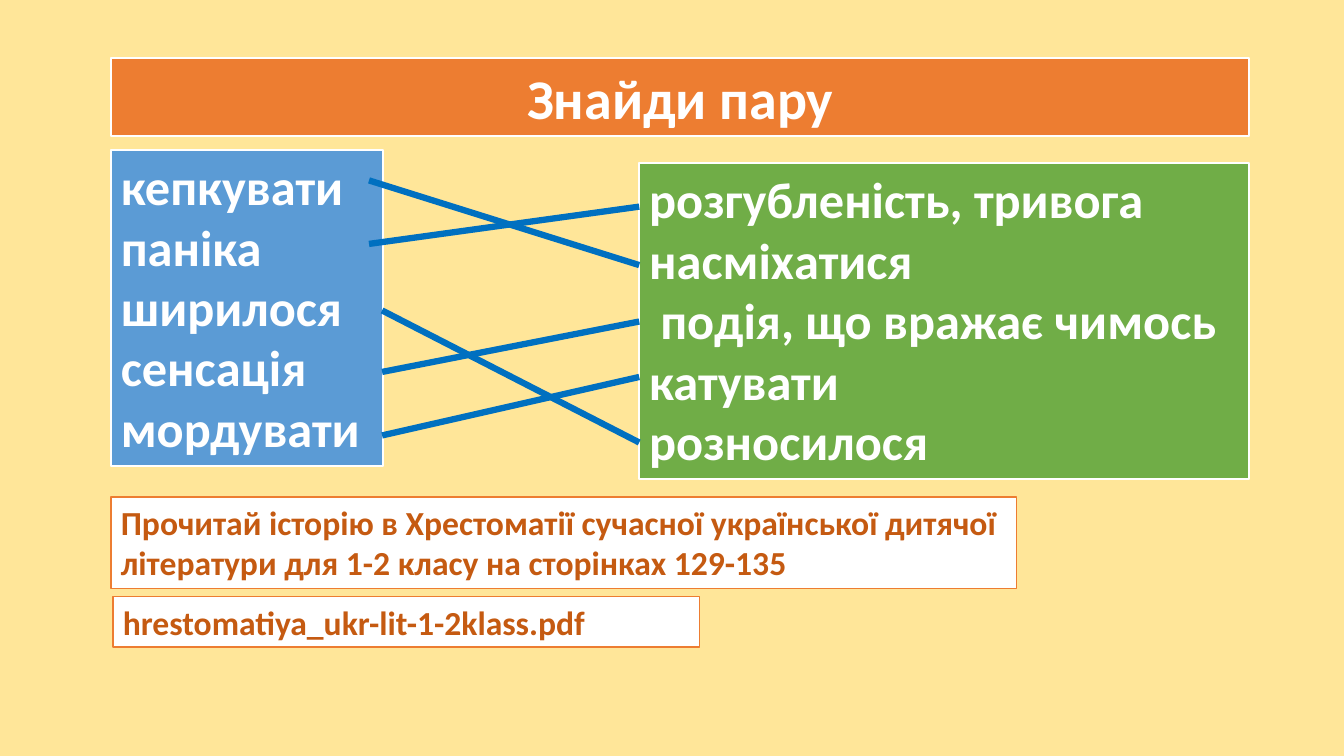
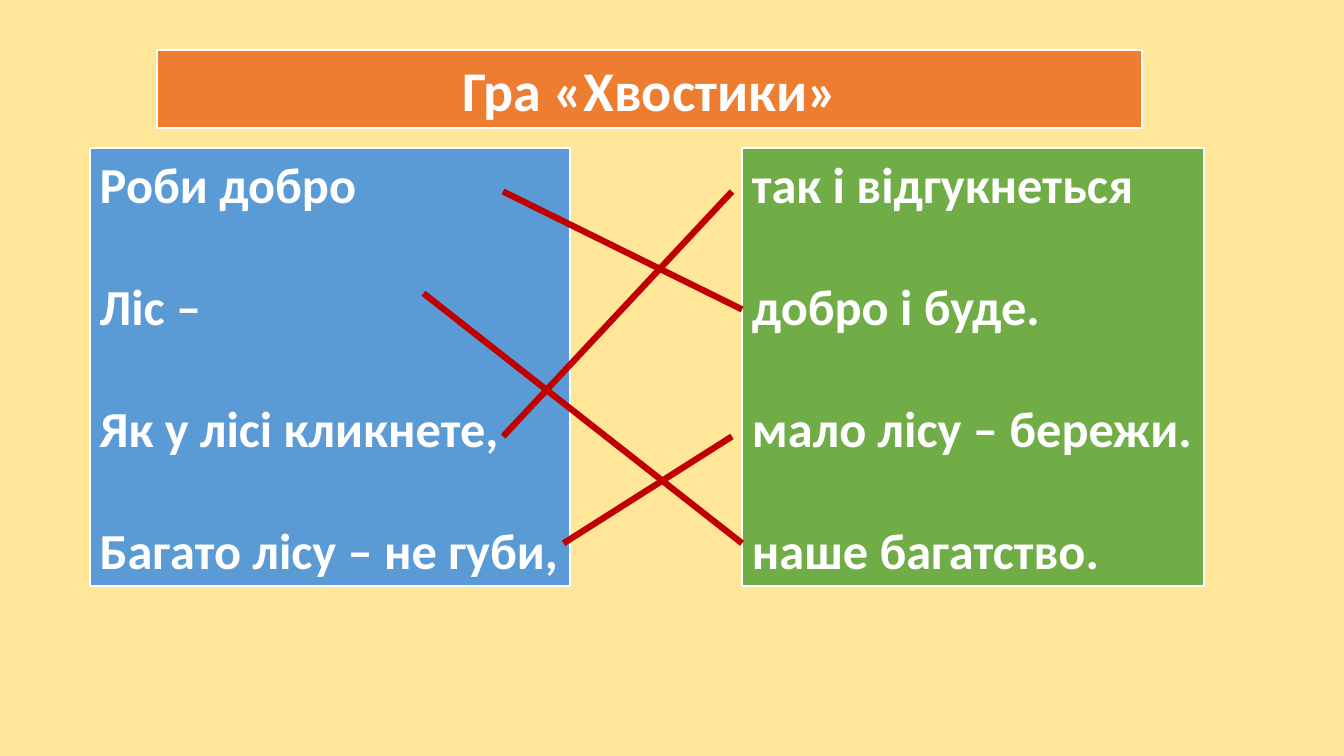
from dataclasses import dataclass

from lxml import etree
from pptx import Presentation
from pptx import util as u
from pptx.dml.color import RGBColor
from pptx.enum import shapes, text
from pptx.oxml.ns import qn
from pptx.slide import Slide

PX = 9144  # EMU; 100 px to the inch
FONT = "Calibri"

CREAM = RGBColor(0xFF, 0xE6, 0x99)
WHITE = RGBColor(0xFF, 0xFF, 0xFF)
ORANGE = RGBColor(0xED, 0x7D, 0x31)
RUST = RGBColor(0xC5, 0x5A, 0x11)
BLUE = RGBColor(0x5B, 0x9B, 0xD5)
GREEN = RGBColor(0x70, 0xAD, 0x47)
DEEP_BLUE = RGBColor(0x00, 0x70, 0xC0)
RED = RGBColor(0xC0, 0x00, 0x00)


@dataclass(frozen=True)
class Box:
    left: int
    top: int
    width: int
    height: int


@dataclass(frozen=True)
class Column:
    box: Box
    lines: tuple[str, ...]
    indents: tuple[int, ...] = ()


@dataclass(frozen=True)
class Note:
    box: Box
    text: str


@dataclass(frozen=True)
class Link:
    """A line between two matching phrases."""
    x1: int
    y1: int
    x2: int
    y2: int


@dataclass(frozen=True)
class MatchingGame:
    title: str
    title_box: Box
    left: Column
    right: Column
    links: tuple[Link, ...]
    link_color: RGBColor
    line_gap: int = 0
    notes: tuple[Note, ...] = ()


GAMES = (
    MatchingGame(
        title="Знайди пару",
        title_box=Box(110, 58, 1129, 77),
        left=Column(
            Box(110, 149, 270, 313),
            ("кепкувати", "паніка", "ширилося", "сенсація", "мордувати"),
        ),
        right=Column(
            Box(634, 162, 605, 313),
            ("розгубленість, тривога", "насміхатися",
             "подія, що вражає чимось", "катувати", "розносилося"),
            indents=(0, 0, 11, 0, 0),
        ),
        links=(
            Link(366, 179, 634, 263),
            Link(366, 242, 634, 205),
            Link(379, 308, 634, 439),
            Link(379, 369, 634, 319),
            Link(379, 432, 634, 374),
        ),
        link_color=DEEP_BLUE,
        notes=(
            Note(Box(110, 493, 898, 91),
                 "Прочитай історію в Хрестоматії сучасної української дитячої "
                 "літератури для 1-2 класу на сторінках 129-135"),
            Note(Box(112, 592, 582, 50), "hrestomatiya_ukr-lit-1-2klass.pdf"),
        ),
    ),
    MatchingGame(
        title="Гра «Хвостики»",
        title_box=Box(156, 50, 977, 77),
        left=Column(
            Box(89, 147, 476, 434),
            ("Роби добро", "Ліс –", "Як у лісі кликнете,",
             "Багато лісу – не губи,"),
        ),
        right=Column(
            Box(736, 147, 458, 434),
            ("так і відгукнеться", "добро і буде.", "мало лісу – бережи.",
             "наше багатство."),
        ),
        links=(
            Link(499, 190, 736, 307),
            Link(420, 291, 736, 539),
            Link(499, 433, 726, 190),
            Link(559, 539, 726, 433),
        ),
        link_color=RED,
        line_gap=44,
    ),
)


def add_text_box(
    page: Slide,
    box: Box,
    lines: tuple[str, ...],
    *,
    fill: RGBColor,
    size: int,
    color: RGBColor = WHITE,
    border: RGBColor = WHITE,
    border_width: float = 1.5,
    align: text.PP_ALIGN = text.PP_ALIGN.LEFT,
    line_gap: int = 0,
    indents: tuple[int, ...] = (),
) -> None:
    """Draw a filled rectangle; line_gap is in points, indents are in px."""
    shape = page.shapes.add_shape(
        shapes.MSO_SHAPE.RECTANGLE,
        box.left * PX, box.top * PX, box.width * PX, box.height * PX,
    )
    shape.shadow.inherit = False
    shape.fill.solid()
    shape.fill.fore_color.rgb = fill
    shape.line.color.rgb = border
    shape.line.width = u.Pt(border_width)

    frame = shape.text_frame
    frame.word_wrap = True
    frame.auto_size = text.MSO_AUTO_SIZE.SHAPE_TO_FIT_TEXT
    frame.vertical_anchor = text.MSO_ANCHOR.TOP
    for index, line in enumerate(lines):
        para = frame.paragraphs[0] if index == 0 else frame.add_paragraph()
        para.alignment = align
        if index and line_gap:
            para.space_before = u.Pt(line_gap)
        if indents and indents[index]:
            para._p.get_or_add_pPr().set("marL", str(indents[index] * PX))
        span = para.add_run()
        span.text = line
        span.font.name = FONT
        span.font.size = u.Pt(size)
        span.font.bold = True
        span.font.color.rgb = color


def add_link(page: Slide, link: Link, color: RGBColor) -> None:
    connector = page.shapes.add_connector(
        shapes.MSO_CONNECTOR.STRAIGHT,
        link.x1 * PX, link.y1 * PX, link.x2 * PX, link.y2 * PX,
    )
    connector.line.color.rgb = color
    connector.line.width = u.Pt(4.5)
    etree.SubElement(connector._element.spPr, qn("a:effectLst"))


def add_game(deck: Presentation, game: MatchingGame) -> None:
    page = deck.slides.add_slide(deck.slide_layouts[6])
    page.background.fill.solid()
    page.background.fill.fore_color.rgb = CREAM

    add_text_box(page, game.title_box, (game.title,), fill=ORANGE, size=40,
                 align=text.PP_ALIGN.CENTER)
    for column, fill in ((game.left, BLUE), (game.right, GREEN)):
        add_text_box(page, column.box, column.lines, fill=fill, size=36,
                     line_gap=game.line_gap, indents=column.indents)
    for link in game.links:
        add_link(page, link, game.link_color)
    for note in game.notes:
        add_text_box(page, note.box, (note.text,), fill=WHITE, size=24,
                     color=RUST, border=ORANGE, border_width=1)


def main() -> None:
    deck = Presentation()
    deck.slide_width = 1333 * PX
    deck.slide_height = 750 * PX
    for game in GAMES:
        add_game(deck, game)
    deck.save("out.pptx")


if __name__ == "__main__":
    main()
